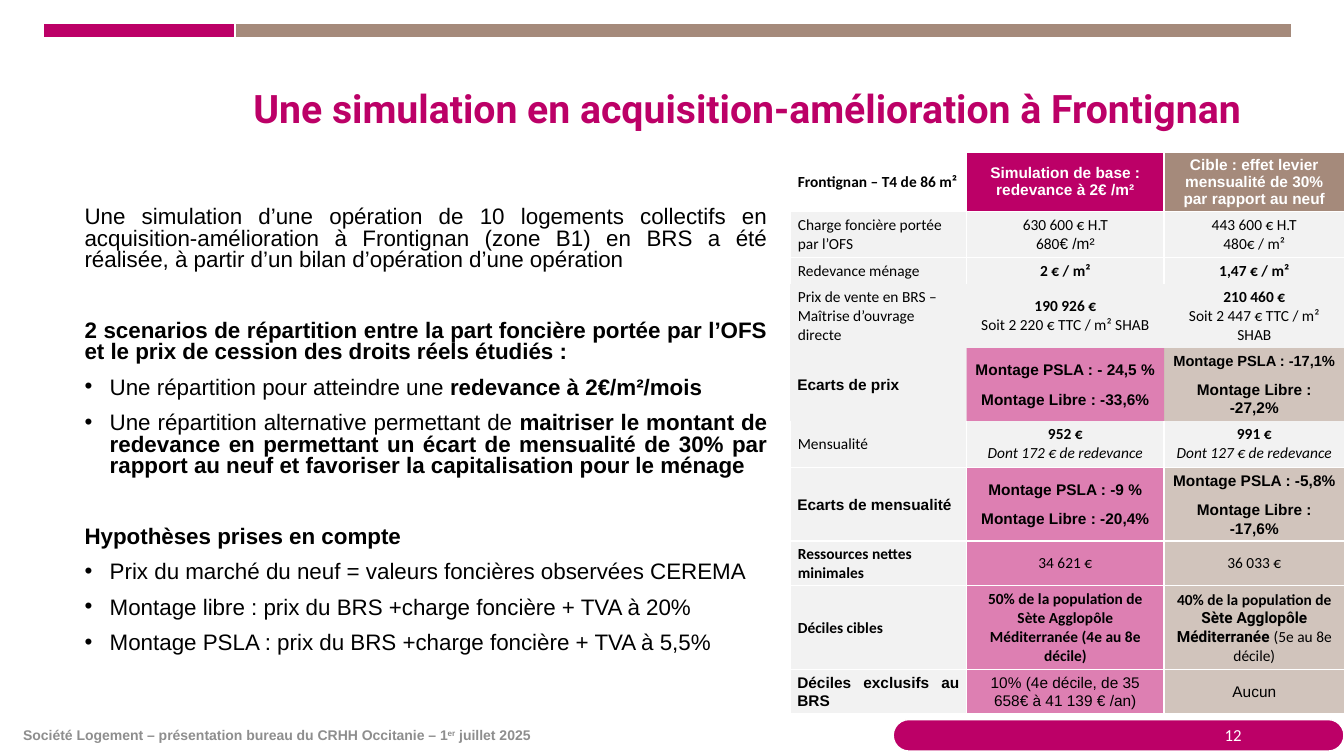
import pptx
import pptx.dml.color
import pptx.enum.shapes
import pptx.enum.text
import pptx.oxml
import pptx.oxml.ns
import pptx.util

Pt = pptx.util.Pt
RGB = pptx.dml.color.RGBColor.from_string
ALIGN = pptx.enum.text.PP_ALIGN
MIDDLE = pptx.enum.text.MSO_ANCHOR.MIDDLE
SHAPE = pptx.enum.shapes.MSO_SHAPE
NS = pptx.oxml.ns.nsdecls("a")

COLORS = {"magenta": "BC0067", "taupe": "A58A7B", "white": "FFFFFF",
          "black": "000000", "light": "F2F2F2", "grey": "8E8E8E"}
LOOKS = {
    "calibri": ("Calibri", False, False),
    "calibri bold": ("Calibri", True, False),
    "calibri italic": ("Calibri", False, True),
    "arial": ("Arial", False, False),
    "arial bold": ("Arial", True, False),
    "roboto bold": ("Roboto", True, False),
}


def add_run(paragraph, text, look, size, color):
    run = paragraph.add_run()
    run.text = text
    run.font.name, run.font.bold, run.font.italic = LOOKS[look]
    run.font.size = Pt(size)
    run.font.color.rgb = RGB(COLORS[color])
    return run


def add_text(left, top, width, height, anchor=None):
    frame = slide.shapes.add_textbox(Pt(left), Pt(top), Pt(width), Pt(height)).text_frame
    frame.word_wrap = True
    frame.vertical_anchor = anchor
    return frame


deck = pptx.Presentation()
deck.slide_width, deck.slide_height = Pt(960), Pt(540)
slide = deck.slides.add_slide(deck.slide_layouts[6])

for kind, left, top, width, height, color in [
    (SHAPE.RECTANGLE, 168, 16.5, 754.5, 10.8, "taupe"),
    (SHAPE.RECTANGLE, 31, 16.5, 137, 10.8, "magenta"),
    (SHAPE.ROUNDED_RECTANGLE, 638, 514, 322, 22.5, "magenta"),
]:
    band = slide.shapes.add_shape(kind, Pt(left), Pt(top), Pt(width), Pt(height))
    band.shadow.inherit = False
    band.fill.solid()
    band.fill.fore_color.rgb = RGB(COLORS[color])
    band.line.color.rgb = RGB(COLORS["white"])
    band.line.width = Pt(1)
band.adjustments[0] = 0.5

footer = add_text(9.4, 515.5, 506, 19.4).paragraphs[0]
add_run(footer, "Société Logement – présentation bureau du CRHH Occitanie – 1", "arial bold", 10, "grey")
ordinal = add_run(footer, "er", "arial bold", 10, "grey")
ordinal.font._element.set("baseline", "30000")
add_run(footer, " juillet 2025", "arial bold", 10, "grey")

title = add_text(174, 37.5, 720, 83, MIDDLE).paragraphs[0]
title.line_spacing = 0.9
add_run(title, "Une simulation en acquisition-amélioration à Frontignan", "roboto bold", 28, "magenta")

page_number = add_text(678, 510.5, 216, 28.8, MIDDLE).paragraphs[0]
page_number.alignment = ALIGN.RIGHT
add_run(page_number, "12", "calibri", 12, "white")

GAP, SECTION_GAP = 10, 35
body = [
    (False, 0, [("Une simulation d’une opération de 10 logements collectifs en acquisition-amélioration à Frontignan (zone B1) en BRS a été réalisée, à partir d’un bilan d’opération d’une opération", "arial")]),
    (False, SECTION_GAP, [("2 scenarios de répartition entre la part foncière portée par l’OFS et le prix de cession des droits réels étudiés :", "arial bold")]),
    (True, GAP, [("Une répartition pour atteindre une ", "arial"),
                 ("redevance à 2€/m²/mois", "arial bold")]),
    (True, GAP, [("Une répartition alternative permettant de ", "arial"),
                 ("maitriser le montant de redevance en permettant un écart de mensualité de 30% par rapport au neuf et favoriser la capitalisation pour le ménage", "arial bold")]),
    (False, SECTION_GAP, [("Hypothèses prises en compte", "arial bold")]),
    (True, GAP, [("Prix du marché du neuf = valeurs foncières observées CEREMA", "arial")]),
    (True, GAP, [("Montage libre : prix du BRS +charge foncière + TVA à 20%", "arial")]),
    (True, GAP, [("Montage PSLA : prix du BRS +charge foncière + TVA à 5,5%", "arial")]),
]
body_frame = add_text(53.3, 144.7, 502, 349)
for i, (bulleted, space_before, runs) in enumerate(body):
    paragraph = body_frame.add_paragraph() if i else body_frame.paragraphs[0]
    if bulleted:
        properties = paragraph._p.get_or_add_pPr()
        properties.set("marL", str(Pt(18)))
        properties.set("indent", str(Pt(-18)))
        properties.append(pptx.oxml.parse_xml(f'<a:buFont {NS} typeface="Arial"/>'))
        properties.append(pptx.oxml.parse_xml(f'<a:buChar {NS} char="•"/>'))
    paragraph.alignment = ALIGN.JUSTIFY
    paragraph.line_spacing = 0.8
    paragraph.space_before = Pt(space_before)
    for text, look in runs:
        add_run(paragraph, text, look, 16, "black")

PLAIN, TINTED = ["light"] * 3, ["light", "magenta", "taupe"]
rows = [
    (41, ["white", "magenta", "taupe"], "LRTB", [
        [[("Frontignan – T4 de 86 m²", "calibri bold")]],
        [[("Simulation de base : redevance à 2€ /m²", "arial bold")]],
        [[("Cible : effet levier mensualité de 30% par rapport au neuf", "arial bold")]]]),
    (33, PLAIN, "LRTB", [
        [[("Charge foncière portée par l’OFS", "calibri")]],
        [[("630 600 € H.T", "calibri")], [("680", "calibri"), ("€ /m²", "arial")]],
        [[("443 600 € H.T", "calibri")], [("480€ / m²", "calibri")]]]),
    (18, PLAIN, "LRT", [
        [[("Redevance ménage", "calibri")]],
        [[("2 € / m²", "calibri bold")]],
        [[("1,47 € / m²", "calibri bold")]]]),
    (46, PLAIN, "", [
        [[("Prix de vente en BRS – Maîtrise d’ouvrage directe", "calibri")]],
        [[("190 926 €", "calibri bold")], [("Soit 2 220 € TTC / m² SHAB", "calibri")]],
        [[("210 460 €", "calibri bold")], [("Soit 2 447 € TTC / m² SHAB", "calibri")]]]),
    (52, TINTED, "", [
        [[("Ecarts de prix", "arial bold")]],
        [[("Montage PSLA : - 24,5 %", "arial bold")], [("Montage Libre : -33,6%", "arial bold")]],
        [[("Montage PSLA : -17,1%", "arial bold")], [("Montage Libre : -27,2%", "arial bold")]]]),
    (33, PLAIN, "LRB", [
        [[("Mensualité", "calibri")]],
        [[("952 €", "calibri bold")], [("Dont 172 € de redevance", "calibri italic")]],
        [[("991 €", "calibri bold")], [("Dont 127 € de redevance", "calibri italic")]]]),
    (52, TINTED, "LRTB", [
        [[("Ecarts de mensualité", "arial bold")]],
        [[("Montage PSLA : -9 %", "arial bold")], [("Montage Libre : -20,4%", "arial bold")]],
        [[("Montage PSLA : -5,8%", "arial bold")], [("Montage Libre : -17,6%", "arial bold")]]]),
    (32, TINTED, "LRTB", [
        [[("Ressources nettes minimales", "calibri bold")]],
        [[("34 621 €", "calibri")]],
        [[("36 033 €", "calibri")]]]),
    (60, TINTED, "LRTB", [
        [[("Déciles cibles", "calibri bold")]],
        [[("50% de la population de Sète Agglopôle Méditerranée (4e au 8e décile)", "calibri bold")]],
        [[("40% de la population de ", "calibri bold"),
          ("Sète Agglopôle Méditerranée ", "roboto bold"),
          ("(5e au 8e décile)", "calibri")]]]),
    (31, TINTED, "LRTB", [
        [[("Déciles exclusifs au BRS", "arial bold")]],
        [[("10% (4e décile, de 35 658€ à 41 139 € /an)", "arial")]],
        [[("Aucun", "arial")]]]),
]
column_widths = [126, 141, 129]
heights = [row[0] for row in rows]
scenarios = slide.shapes.add_table(len(rows), 3, Pt(564.5), Pt(109), Pt(sum(column_widths)), Pt(sum(heights))).table
for column, width in zip(scenarios.columns, column_widths):
    column.width = Pt(width)

for r, (height, fills, sides, cells) in enumerate(rows):
    scenarios.rows[r].height = Pt(height)
    spaced = r > 0 and cells[0][0][0][1] == "arial bold"
    for c, paragraphs in enumerate(cells):
        cell = scenarios.cell(r, c)
        cell.vertical_anchor = MIDDLE
        cell.margin_left = cell.margin_right = Pt(5 if spaced else 5.4)
        cell.margin_top = cell.margin_bottom = Pt(1.2 if spaced or r == 0 else 2.7)
        for side in "LRTB":
            paint = f'<a:solidFill><a:srgbClr val="{COLORS["white"]}"/></a:solidFill>' if side in sides else "<a:noFill/>"
            cell._tc.get_or_add_tcPr().append(
                pptx.oxml.parse_xml(f'<a:ln{side} {NS} w="{Pt(1)}">{paint}</a:ln{side}>'))
        cell.fill.solid()
        cell.fill.fore_color.rgb = RGB(COLORS[fills[c]])
        if r and fills[c] != "light":
            tint = cell._tc.tcPr.find(pptx.oxml.ns.qn("a:solidFill"))[0]
            tint.append(pptx.oxml.parse_xml(f'<a:alpha {NS} val="50000"/>'))
        for p, runs in enumerate(paragraphs):
            paragraph = cell.text_frame.add_paragraph() if p else cell.text_frame.paragraphs[0]
            paragraph.alignment = ALIGN.CENTER if c else ALIGN.JUSTIFY if spaced else ALIGN.LEFT
            if spaced:
                paragraph.line_spacing = 1.07
                paragraph.space_after = Pt(8 if p < len(paragraphs) - 1 else 0)
            for text, look in runs:
                size = 10.5 if text.endswith("-17,1%") else 11
                add_run(paragraph, text, look, size, "white" if r == 0 and c else "black")

deck.save("out.pptx")
